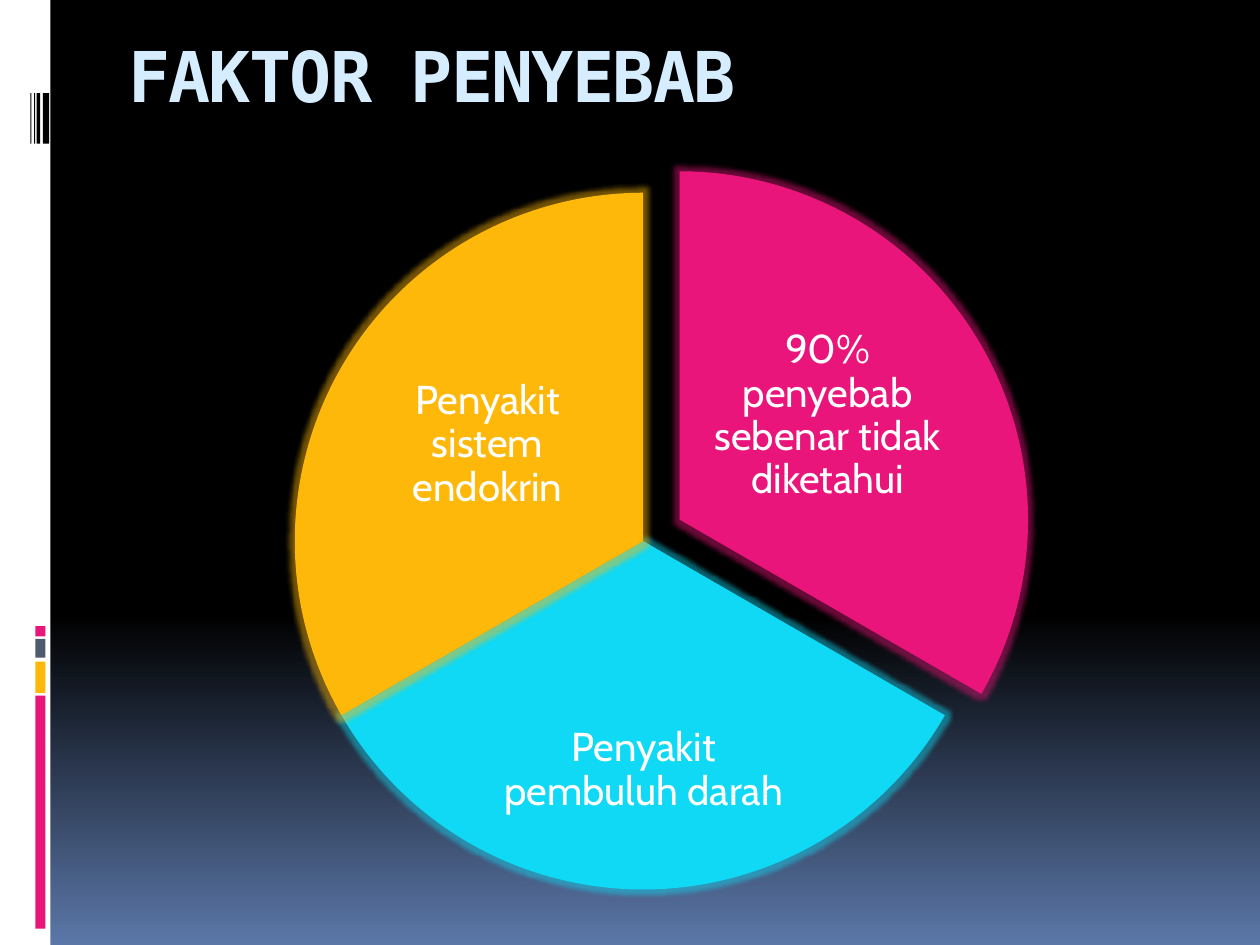
"""Build the slide on causal factors with an exploded three-part pie."""
from dataclasses import dataclass

from lxml import etree
from pptx import Presentation
from pptx import util as u
from pptx.dml.color import RGBColor
from pptx.enum import shapes, text
from pptx.oxml.ns import qn

BLACK = RGBColor(0x00, 0x00, 0x00)
WHITE = RGBColor(0xFF, 0xFF, 0xFF)
DUSK = RGBColor(0x5B, 0x77, 0xA8)
SLATE = RGBColor(0x4E, 0x5B, 0x6F)
PALE_BLUE = RGBColor(0xD6, 0xEC, 0xFF)
PINK = RGBColor(0xEA, 0x15, 0x7A)
CYAN = RGBColor(0x0F, 0xD9, 0xF4)
AMBER = RGBColor(0xFE, 0xB8, 0x0A)
PIE_SIZE = 5.53
PIE_INSET = 0.03


@dataclass(frozen=True)
class Box:
    left: float
    top: float
    width: float
    height: float

    def lengths(self) -> tuple:
        return tuple(u.Inches(value) for value in (self.left, self.top, self.width, self.height))


@dataclass(frozen=True)
class Bar:
    box: Box
    color: RGBColor


@dataclass(frozen=True)
class Slice:
    label: str
    color: RGBColor
    left: float
    top: float
    start: float
    end: float
    label_box: Box
    inset_top: float = PIE_INSET


BARS = [
    Bar(Box(0, 0, 0.4, 7.5), WHITE),
    Bar(Box(0.28, 5.52, 0.08, 1.85), PINK),
    Bar(Box(0.28, 5.25, 0.08, 0.25), AMBER),
    Bar(Box(0.28, 5.07, 0.08, 0.15), SLATE),
    Bar(Box(0.28, 4.97, 0.08, 0.08), PINK),
] + [
    Bar(Box(left, 0.74, width, 0.4), BLACK)
    for left, width in ((0.34, 0.05), (0.29, 0.03), (0.27, 0.01), (0.24, 0.01))
]

SLICES = [
    Slice("90% penyebab sebenar tidak diketahui", PINK, 2.63, 1.36, 270, 30,
          Box(5.63, 2.38, 1.88, 1.84)),
    Slice("Penyakit pembuluh darah", CYAN, 2.34, 1.53, 30, 150,
          Box(3.86, 5.01, 2.5, 1.71), 0.53),
    Slice("Penyakit sistem endokrin", AMBER, 2.34, 1.53, 150, 270,
          Box(2.93, 2.61, 1.88, 1.84)),
]


def add_filled(slide, kind, box: Box, color: RGBColor):
    """Add a borderless, shadowless shape in one colour."""
    shape = slide.shapes.add_shape(kind, *box.lengths())
    shape.shadow.inherit = False
    shape.fill.solid()
    shape.fill.fore_color.rgb = color
    shape.line.fill.background()
    return shape


def add_glow(shape, color: RGBColor) -> None:
    """Put a soft glow around a shape."""
    effects = shape._element.spPr.find(qn("a:effectLst"))
    glow = etree.SubElement(effects, qn("a:glow"), rad=str(u.Inches(0.07)))
    tint = etree.SubElement(glow, qn("a:srgbClr"), val=str(color))
    etree.SubElement(tint, qn("a:alpha"), val="45000")


def add_text(slide, box: Box, wording: str, font: str, size: float, color: RGBColor):
    """Add a wrapping text box with one formatted paragraph."""
    frame = slide.shapes.add_textbox(*box.lengths()).text_frame
    frame.word_wrap = True
    frame.text = wording
    run = frame.paragraphs[0].runs[0]
    run.font.name = font
    run.font.size = u.Pt(size)
    run.font.color.rgb = color
    return frame


def add_title(slide) -> None:
    """Add the bold, slightly tightened title."""
    frame = add_text(slide, Box(0.92, 0.17, 8.5, 1), "FAKTOR PENYEBAB",
                     "DejaVu Sans Mono", 40, PALE_BLUE)
    frame.margin_top = u.Inches(0.09)
    font = frame.paragraphs[0].runs[0].font
    font.bold = True
    font._element.set("spc", "-100")


def add_slice(slide, piece: Slice) -> None:
    """Draw a pie slice and its centred label."""
    box = Box(piece.left, piece.top, PIE_SIZE, PIE_SIZE)
    shape = add_filled(slide, shapes.MSO_SHAPE.PIE, box, piece.color)
    for index, degrees in enumerate((piece.start, piece.end)):
        shape.adjustments[index] = degrees * 0.6
    add_glow(shape, piece.color)
    frame = add_text(slide, piece.label_box, piece.label, "Cabin", 23, WHITE)
    frame.vertical_anchor = text.MSO_ANCHOR.MIDDLE
    frame.margin_left = frame.margin_right = frame.margin_bottom = u.Inches(PIE_INSET)
    frame.margin_top = u.Inches(piece.inset_top)
    paragraph = frame.paragraphs[0]
    paragraph.alignment = text.PP_ALIGN.CENTER
    paragraph.line_spacing = 0.9


def paint_background(slide) -> None:
    """Fade the background from black down to dusk blue."""
    fill = slide.background.fill
    fill.gradient()
    fill.gradient_angle = 270
    for stop, position, color in zip(fill.gradient_stops, (0.65, 1), (BLACK, DUSK)):
        stop.position = position
        stop.color.rgb = color


def main() -> None:
    """Build and save the presentation."""
    presentation = Presentation()
    presentation.slide_width = u.Inches(10)
    presentation.slide_height = u.Inches(7.5)
    slide = presentation.slides.add_slide(presentation.slide_layouts[6])
    paint_background(slide)
    for bar in BARS:
        add_filled(slide, shapes.MSO_SHAPE.RECTANGLE, bar.box, bar.color)
    add_title(slide)
    for piece in SLICES:
        add_slice(slide, piece)
    presentation.save("out.pptx")


if __name__ == "__main__":
    main()
